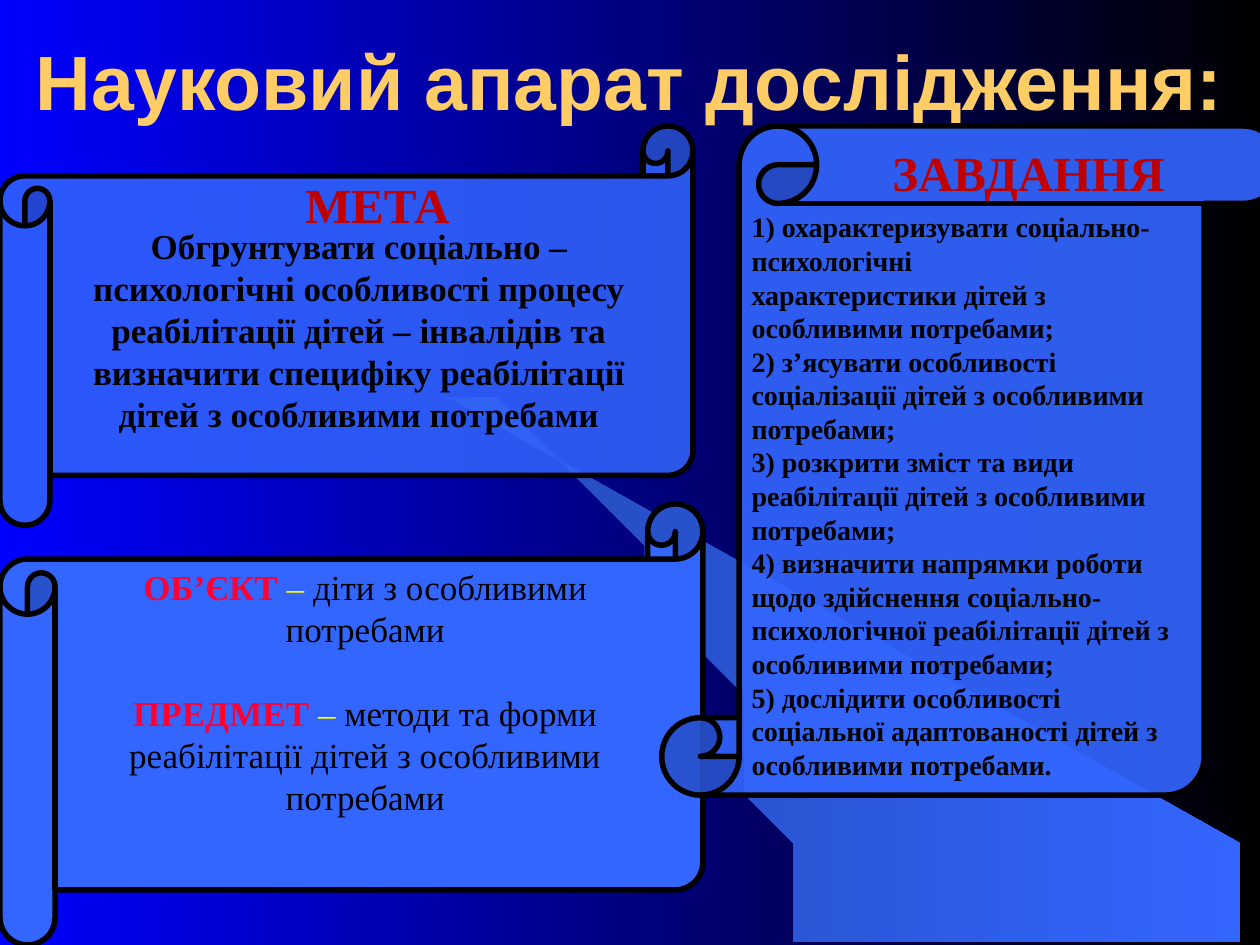
from lxml import etree
from pptx import Presentation
from pptx.dml.color import RGBColor
from pptx.enum.shapes import MSO_SHAPE
from pptx.enum.text import MSO_ANCHOR, PP_ALIGN
from pptx.oxml.ns import qn
from pptx.util import Cm, Pt

BLUE = RGBColor(0x33, 0x66, 0xFF)
DEEP = RGBColor(0x24, 0x49, 0xB6)
PURE = RGBColor(0x00, 0x00, 0xFF)
BLACK = RGBColor(0x00, 0x00, 0x00)
GOLD = RGBColor(0xFF, 0xCC, 0x66)
RED = RGBColor(0xC0, 0x00, 0x00)
ROSE = RGBColor(0xFF, 0x00, 0x33)
YELLOW = RGBColor(0xFF, 0xFF, 0x00)

LEFT, CENTER = PP_ALIGN.LEFT, PP_ALIGN.CENTER
TOP, BOTTOM = MSO_ANCHOR.TOP, MSO_ANCHOR.BOTTOM
WIDE, TALL = MSO_SHAPE.HORIZONTAL_SCROLL, MSO_SHAPE.VERTICAL_SCROLL
SERIF = "Times New Roman"

# Outline of the light beam, in centimetres
BEAM = [
    (15.8, 19.05), (25.4, 19.05), (25.4, 17.35), (9.09, 7.52), (9.8, 8.05),
    (10.39, 8.48), (11.02, 9.07), (11.66, 9.65), (12.6, 10.67),
    (13.41, 11.73), (14.02, 12.67), (14.55, 13.64), (14.96, 14.63),
    (15.27, 15.49), (15.47, 16.26), (15.65, 17.2), (15.75, 18.01),
]

GOAL = [[(
    "Обгрунтувати соціально – психологічні особливості процесу "
    "реабілітації дітей – інвалідів та визначити специфіку реабілітації "
    "дітей з особливими потребами", BLACK, True)]]
TOPIC = [
    [("ОБ’ЄКТ", ROSE, True), (" –", YELLOW, False),
     (" діти з особливими потребами", BLACK, False)],
    [("ПРЕДМЕТ ", ROSE, True), ("–", YELLOW, False),
     (" методи та форми реабілітації дітей з особливими потребами",
      BLACK, False)],
]
TASKS = [[(text, BLACK, True)] for text in (
    "1) охарактеризувати соціально-психологічні\n"
    "характеристики дітей з особливими потребами;",
    "2) з’ясувати особливості соціалізації дітей з особливими потребами;",
    "3) розкрити зміст та види реабілітації дітей з особливими потребами;",
    "4) визначити напрямки роботи щодо здійснення "
    "соціально-психологічної реабілітації дітей з особливими потребами;",
    "5) дослідити особливості соціальної адаптованості дітей з "
    "особливими потребами.",
)]


def blend(fill, start, end):
    """Fill with a left-to-right gradient of two colours."""
    fill.gradient()
    fill.gradient_angle = 0
    for stop, color in zip(fill.gradient_stops, (start, end)):
        stop.color.rgb = color


def write(frame, paras, size, font=SERIF, align=CENTER, gap=0):
    """Write paragraphs of (text, colour, bold) runs, gap points apart."""
    for i, parts in enumerate(paras):
        para = frame.paragraphs[0] if i == 0 else frame.add_paragraph()
        para.alignment = align
        if i and gap:
            para.space_before = Pt(gap)
        for text, color, bold in parts:
            for j, line in enumerate(text.split("\n")):
                if j:
                    para.add_line_break()
                run = para.add_run()
                run.text = line
                run.font.name, run.font.size = font, Pt(size)
                run.font.bold = bold
                run.font.color.rgb = color


def add_beam(slide):
    form = slide.shapes.build_freeform(*BEAM[0], scale=Cm(1))
    form.add_line_segments(BEAM[1:], close=True)
    beam = form.convert_to_shape()
    beam.shadow.inherit = False
    beam.line.fill.background()
    blend(beam.fill, DEEP, BLUE)


def add_title(slide, x, y, w, h):
    box = slide.shapes.add_textbox(Cm(x), Cm(y), Cm(w), Cm(h))
    frame = box.text_frame
    frame.word_wrap = True
    frame.vertical_anchor = BOTTOM
    frame.margin_bottom = Cm(0.64)
    write(frame, [[("Науковий апарат дослідження:", GOLD, True)]], 44, "Arial")


def add_scroll(slide, kind, x, y, w, h, paras, size, alpha=100, drop=0.13,
               align=CENTER, gap=0):
    """Draw a scroll; alpha is its opacity, drop its top margin in cm."""
    scroll = slide.shapes.add_shape(kind, Cm(x), Cm(y), Cm(w), Cm(h))
    scroll.shadow.inherit = False
    scroll.fill.solid()
    scroll.fill.fore_color.rgb = BLUE
    if alpha < 100:
        tone = scroll.fill._xPr.find(qn("a:solidFill"))[0]
        etree.SubElement(tone, qn("a:alpha")).set("val", str(alpha * 1000))
    scroll.line.color.rgb = BLACK
    scroll.line.width = Pt(3.15)
    frame = scroll.text_frame
    frame.word_wrap = True
    frame.vertical_anchor = TOP
    frame.margin_top = Cm(drop)
    write(frame, paras, size, align=align, gap=gap)


def add_head(slide, text, x, y, w):
    box = slide.shapes.add_textbox(Cm(x), Cm(y), Cm(w), Cm(1.45))
    box.text_frame.word_wrap = False
    write(box.text_frame, [[(text, RED, True)]], 28)


def add_goal(slide, x, y, w, h):
    add_scroll(slide, WIDE, x, y, w, h, GOAL, 20, alpha=86, drop=0.98)
    add_head(slide, "МЕТА", x + 5.84, y + 0.86, 3.53)


def add_topic(slide, x, y, w, h):
    add_scroll(slide, WIDE, x, y, w, h, TOPIC, 20, gap=24)


def add_tasks(slide, x, y, w, h):
    add_scroll(slide, TALL, x, y, w, h, TASKS, 16, alpha=91, align=LEFT)
    add_head(slide, "ЗАВДАННЯ", x + 4.36, y + 0.2, 6.07)


def main():
    deck = Presentation()
    deck.slide_width, deck.slide_height = Cm(25.4), Cm(19.05)
    slide = deck.slides.add_slide(deck.slide_layouts[6])
    blend(slide.background.fill, PURE, BLACK)
    add_beam(slide)
    add_title(slide, 0, 0, 25.4, 3.18)
    add_goal(slide, 0, 2.54, 13.97, 8.05)
    add_topic(slide, 0, 10.16, 14.17, 8.89)
    add_tasks(slide, 13.34, 2.54, 12.5, 13.49)
    deck.save("out.pptx")


if __name__ == "__main__":
    main()
